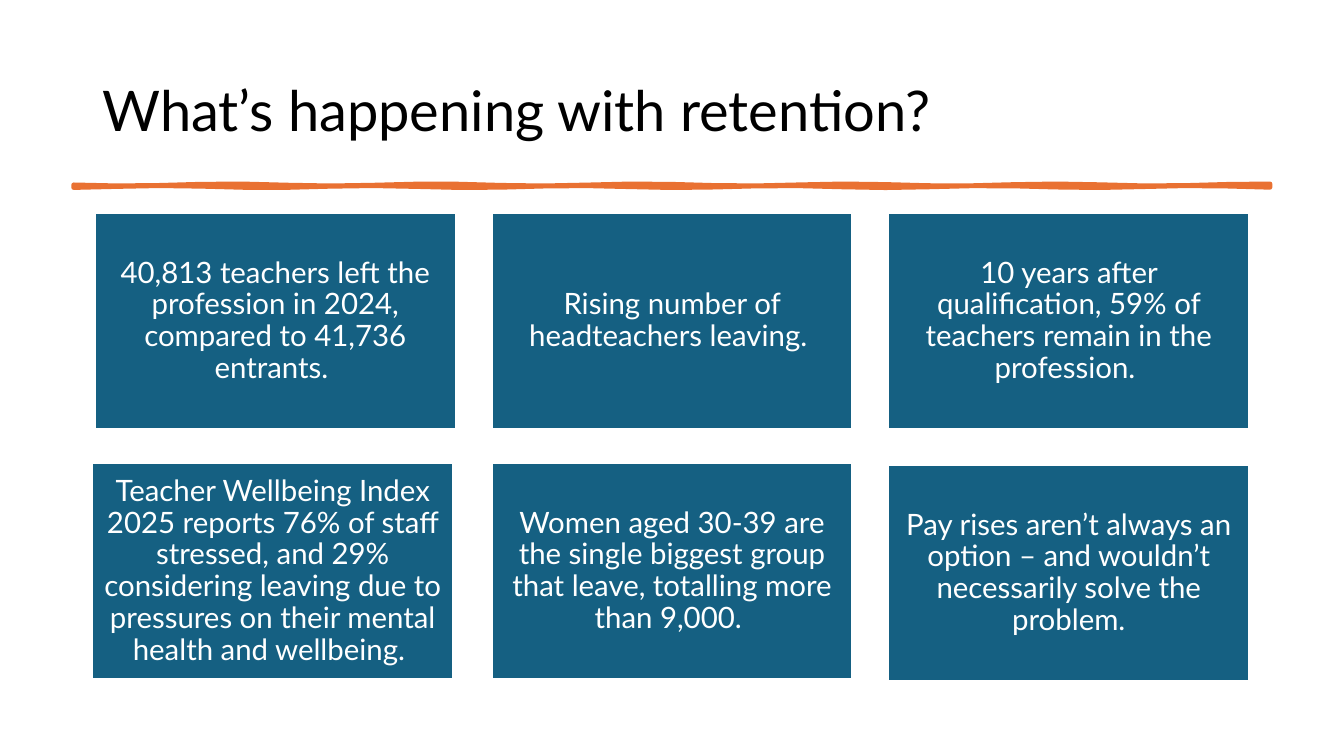
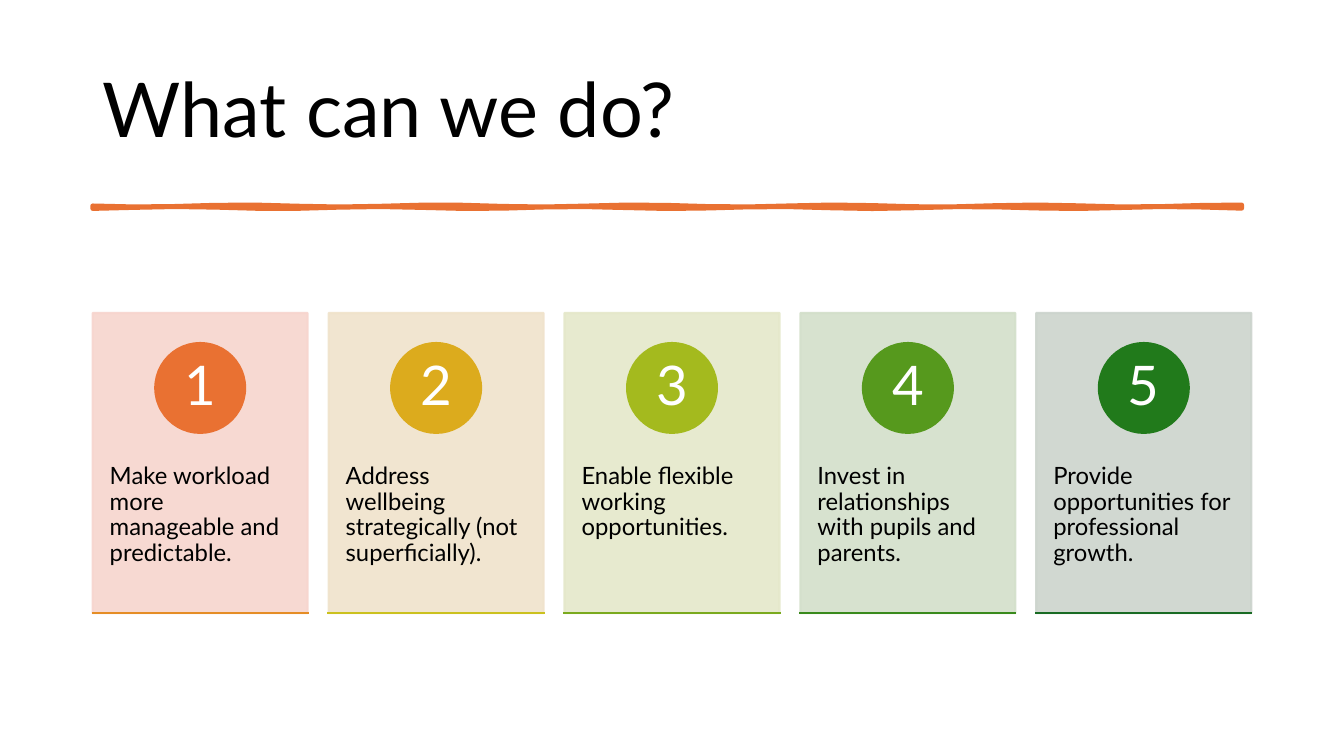
"""Build two slides on teacher retention and what schools can do about it."""
from math import sin

from lxml.etree import SubElement
from pptx import Presentation
from pptx.dml.color import RGBColor
from pptx.enum.shapes import MSO_CONNECTOR as Connector, MSO_SHAPE as Shape
from pptx.enum.text import MSO_ANCHOR as Anchor, PP_ALIGN as Align
from pptx.oxml.ns import qn
from pptx.util import Pt

FONT = "Lato"
BLACK = RGBColor(0x00, 0x00, 0x00)
WHITE = RGBColor(0xFF, 0xFF, 0xFF)
ORANGE = RGBColor(0xE9, 0x71, 0x32)
BLUE = RGBColor(0x15, 0x60, 0x82)
AMBER = RGBColor(0xE5, 0x8D, 0x25)
GOLD = RGBColor(0xDC, 0xAB, 0x1D)
YELLOW = RGBColor(0xCB, 0xC1, 0x1E)
LIME = RGBColor(0xA4, 0xBA, 0x1E)
LEAF = RGBColor(0x7A, 0xAA, 0x1E)
GREEN = RGBColor(0x56, 0x99, 0x1D)
GRASS = RGBColor(0x39, 0x8A, 0x1C)
FOREST = RGBColor(0x21, 0x7A, 0x1B)
PINE = RGBColor(0x19, 0x6B, 0x24)
PALE_ORANGE = RGBColor(0xF7, 0xD5, 0xCE)
PALE_GOLD = RGBColor(0xF0, 0xE3, 0xCB)
PALE_LIME = RGBColor(0xE5, 0xE8, 0xCA)
PALE_GREEN = RGBColor(0xD3, 0xDF, 0xCA)
PALE_GREY = RGBColor(0xCC, 0xD4, 0xCD)

MARGIN = 66.2
TITLE_BOX = (MARGIN, 28.8, 828, 104.4)

FACT_SIZE = (257.8, 154.8)
FACT_ORIGIN = (67.7, 152)
FACT_PITCH = (283.4, 178.6)
FACTS = [
    (0, 0, "40,813 teachers left the profession in 2024, compared to 41,736 entrants. "),
    (0, 0, "Rising number of headteachers leaving. "),
    (0, 0, "10 years after qualification, 59% of teachers remain in the profession. "),
    (-1.8, 0, "Teacher Wellbeing Index 2025 reports 76% of staff stressed, and 29% "
              "considering leaving due to pressures on their mental health and wellbeing. "),
    (0, 0, "Women aged 30-39 are the single biggest group that leave, "
           "totalling more than 9,000. "),
    (0, 1.4, "Pay rises aren’t always an option – and wouldn’t necessarily "
             "solve the problem."),
]

STEP_TOP, STEP_WIDTH, STEP_HEIGHT, STEP_PITCH = 223.6, 153.6, 214.4, 168.5
BADGE_TOP, BADGE_SIZE = 245, 64.2
STEPS = [
    ("Make workload more manageable and predictable.", PALE_ORANGE, ORANGE, AMBER),
    ("Address wellbeing strategically (not superficially).", PALE_GOLD, GOLD, YELLOW),
    ("Enable flexible working opportunities.", PALE_LIME, LIME, LEAF),
    ("Invest in relationships with pupils and parents.", PALE_GREEN, GREEN, GRASS),
    ("Provide opportunities for professional growth.", PALE_GREY, FOREST, PINE),
]


def set_text(shape, text, size, color, align=Align.LEFT, anchor=Anchor.MIDDLE,
             insets=(7.2, 3.6, 7.2, 3.6)):
    """Write one formatted paragraph into a shape."""
    frame = shape.text_frame
    frame.text = text
    frame.word_wrap = True
    frame.vertical_anchor = anchor
    (frame.margin_left, frame.margin_top,
     frame.margin_right, frame.margin_bottom) = map(Pt, insets)
    paragraph = frame.paragraphs[0]
    paragraph.alignment = align
    paragraph.line_spacing = 0.9
    font = paragraph.runs[0].font
    font.name, font.size, font.color.rgb = FONT, Pt(size), color


def paint(shape, fill, line, width=1.5):
    """Give a shape a solid fill and outline without shadow."""
    shape.shadow.inherit = False
    shape.fill.solid()
    shape.fill.fore_color.rgb = fill
    shape.line.color.rgb = line
    shape.line.width = Pt(width)


def add_box(slide, kind, box, fill, line):
    """Add a painted preset shape."""
    shape = slide.shapes.add_shape(kind, *map(Pt, box))
    paint(shape, fill, line)
    return shape


def set_opacity(shape, percent):
    """Make the fill and outline of a shape slightly transparent."""
    for color in shape._element.spPr.iter(qn("a:srgbClr")):
        SubElement(color, qn("a:alpha"), val=str(percent * 1000))


def add_title(slide, text, size):
    """Add the slide title."""
    set_text(slide.shapes.add_textbox(*map(Pt, TITLE_BOX)), text, size, BLACK)


def add_brush_rule(slide, left, top, width, thickness=1.4, steps=28):
    """Add a hand-drawn orange rule with two uneven edges."""
    def edge(offset, phase):
        return [(Pt(left + width * i / steps),
                 Pt(top + offset + 0.7 * sin(1.3 * i + phase)))
                for i in range(steps + 1)]

    upper, lower = edge(0, 0), edge(thickness, 2)
    builder = slide.shapes.build_freeform(*upper[0])
    builder.add_line_segments(upper[1:] + lower[::-1], close=True)
    rule = builder.convert_to_shape()
    paint(rule, ORANGE, ORANGE, 3.25)
    SubElement(rule.line._get_or_add_ln(), qn("a:round"))


def add_fact(slide, index, shift_x, shift_y, text):
    """Add one blue fact card to the three-column grid."""
    row, column = divmod(index, 3)
    left = FACT_ORIGIN[0] + column * FACT_PITCH[0] + shift_x
    top = FACT_ORIGIN[1] + row * FACT_PITCH[1] + shift_y
    card = add_box(slide, Shape.RECTANGLE, (left, top, *FACT_SIZE), BLUE, WHITE)
    set_text(card, text, 21, WHITE, Align.CENTER, insets=(6.5,) * 4)


def add_step(slide, index, text, pale, badge_color, base_color):
    """Add one numbered step card with its badge and base line."""
    left = MARGIN + index * STEP_PITCH
    bottom = STEP_TOP + STEP_HEIGHT
    card = add_box(slide, Shape.RECTANGLE, (left, STEP_TOP, STEP_WIDTH, STEP_HEIGHT),
                   pale, pale)
    set_opacity(card, 90)
    set_text(card, text, 17, BLACK, anchor=Anchor.TOP, insets=(12.2, 107.8, 12.2, 4))

    badge_left = left + (STEP_WIDTH - BADGE_SIZE) / 2
    badge = add_box(slide, Shape.OVAL, (badge_left, BADGE_TOP, BADGE_SIZE, BADGE_SIZE),
                    badge_color, badge_color)
    set_text(badge, str(index + 1), 39, WHITE, Align.CENTER, insets=(0,) * 4)

    base = slide.shapes.add_connector(
        Connector.STRAIGHT, *map(Pt, (left, bottom, left + STEP_WIDTH, bottom)))
    base.line.color.rgb = base_color
    base.line.width = Pt(1.5)
    base.line._get_or_add_ln().set("cap", "sq")
    SubElement(base._element.spPr, qn("a:effectLst"))


def add_slide(presentation, title, title_size, rule):
    """Add a blank slide with its title and brush rule."""
    slide = presentation.slides.add_slide(presentation.slide_layouts[6])
    add_title(slide, title, title_size)
    add_brush_rule(slide, *rule)
    return slide


def main():
    """Build and save the presentation."""
    presentation = Presentation()
    presentation.slide_width, presentation.slide_height = Pt(960), Pt(540)

    slide = add_slide(presentation, "What’s happening with retention?", 40,
                      (52.6, 132, 854.6))
    for index, fact in enumerate(FACTS):
        add_fact(slide, index, *fact)

    slide = add_slide(presentation, "What can we do?", 54, (MARGIN, 147, 820.8))
    for index, step in enumerate(STEPS):
        add_step(slide, index, *step)

    presentation.save("out.pptx")


if __name__ == "__main__":
    main()
